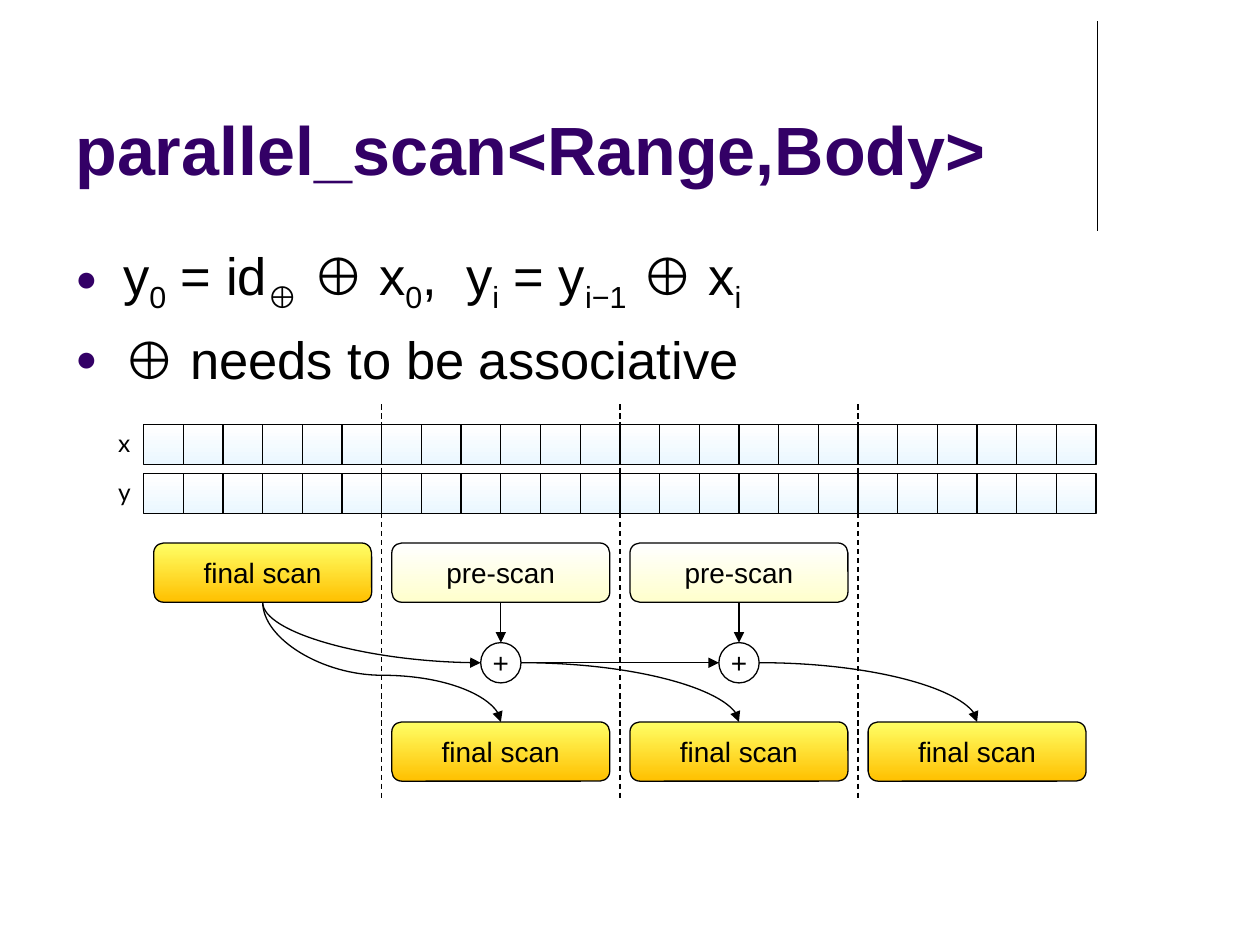
from lxml.etree import SubElement
from pptx import Presentation
from pptx.dml.color import RGBColor
from pptx.enum.dml import MSO_LINE
from pptx.enum.shapes import MSO_CONNECTOR, MSO_SHAPE
from pptx.enum.text import MSO_ANCHOR, PP_ALIGN
from pptx.oxml.ns import qn
from pptx.util import Inches, Pt

COLORS = {
    "title": "330066",
    "ink": "000000",
    "white": "FFFFFF",
    "cell": "EBF7FF",
    "pre": "FFFFCC",
    "final_top": "FFFF66",
    "final_bottom": "FFC000",
}
CELL_FILL = ("white", "cell")
PRE_FILL = ("white", "pre")
FINAL_FILL = ("final_top", "final_bottom")

# Grid of four blocks with six cells each
GRID_LEFT, BLOCK_W, BLOCKS, CELLS_PER_BLOCK = 1.14, 1.89, 4, 6
CELL_W = BLOCK_W / CELLS_PER_BLOCK
ROWS = {"y": 3.76, "x": 3.37}

# Scan boxes and sum circles
SCAN_GAP, SCAN_H = 0.08, 0.47
SCAN_W = BLOCK_W - 2 * SCAN_GAP
FIRST_TOP, SECOND_TOP = 4.31, 5.73
FIRST_BOTTOM = FIRST_TOP + SCAN_H
SUM_SIZE, SUM_TOP = 0.32, 5.1
SUM_MIDDLE = SUM_TOP + SUM_SIZE / 2

# Each formula piece is (text, is_subscript)
RECURRENCE = [("y", False), ("0", True), (" = id", False), ("⊕", True),
              (" ⊕ x", False), ("0", True), (",  y", False), ("i", True),
              (" = y", False), ("i−1", True), (" ⊕ x", False), ("i", True)]
REQUIREMENT = [("⊕ needs to be associative", False)]


def rgb(name):
    return RGBColor.from_string(COLORS[name])


def block_left(block):
    return GRID_LEFT + block * BLOCK_W


def block_center(block):
    return block_left(block) + BLOCK_W / 2


def style_font(paragraph, size, color="ink", name="Arial", bold=False):
    font = paragraph.font
    font.name, font.size, font.bold = name, Pt(size), bold
    font.color.rgb = rgb(color)


def add_text_box(slide, left, top, width, height, wrap=True):
    frame = slide.shapes.add_textbox(
        Inches(left), Inches(top), Inches(width), Inches(height)).text_frame
    frame.word_wrap = wrap
    return frame


def add_bullet(paragraph, pieces):
    p_pr = paragraph._p.get_or_add_pPr()
    p_pr.set("marL", str(Inches(0.38)))
    p_pr.set("indent", str(-Inches(0.38)))
    bullet_color = SubElement(p_pr, qn("a:buClr"))
    SubElement(bullet_color, qn("a:srgbClr"), val=COLORS["title"])
    SubElement(p_pr, qn("a:buSzPct"), val="70000")
    SubElement(p_pr, qn("a:buFont"), typeface="Arial")
    SubElement(p_pr, qn("a:buChar"), char="●")
    style_font(paragraph, 30)
    for text, is_subscript in pieces:
        run = paragraph.add_run()
        run.text = text
        if is_subscript:
            run._r.get_or_add_rPr().set("baseline", "-25000")


def add_node(slide, preset, left, top, width, height, fill, label=""):
    """Add an outlined shape; fill is one color name or a top and bottom pair."""
    node = slide.shapes.add_shape(
        preset, Inches(left), Inches(top), Inches(width), Inches(height))
    node.shadow.inherit = False
    node.line.color.rgb = rgb("ink")
    node.line.width = Pt(0.75)
    if isinstance(fill, tuple):
        node.fill.gradient()
        node.fill.gradient_angle = 270
        for stop, color in zip(node.fill.gradient_stops, fill):
            stop.color.rgb = rgb(color)
    else:
        node.fill.solid()
        node.fill.fore_color.rgb = rgb(fill)
    if label:
        frame = node.text_frame
        frame.word_wrap = False
        frame.vertical_anchor = MSO_ANCHOR.MIDDLE
        paragraph = frame.paragraphs[0]
        paragraph.text = label
        paragraph.alignment = PP_ALIGN.CENTER
        style_font(paragraph, 16)
    return node


def add_scan(slide, block, top, fill, label):
    return add_node(slide, MSO_SHAPE.ROUNDED_RECTANGLE,
                    block_left(block) + SCAN_GAP, top, SCAN_W, SCAN_H, fill, label)


def add_line(slide, start, end, kind=MSO_CONNECTOR.STRAIGHT, dashed=False, arrow=False):
    line = slide.shapes.add_connector(kind, *map(Inches, start + end))
    line.line.color.rgb = rgb("ink")
    line.line.width = Pt(0.75)
    if dashed:
        line.line.dash_style = MSO_LINE.DASH
    if arrow:
        SubElement(line.line._get_or_add_ln(), qn("a:tailEnd"), type="triangle")
    SubElement(line._element.spPr, qn("a:effectLst"))
    return line


def add_curve(slide, start, end, leaves_down=False, bend=None):
    """Add a curved arrow: a quarter turn, or an S whose middle lies at bend."""
    curve = add_line(slide, start, end, MSO_CONNECTOR.CURVE, arrow=True)
    geometry = curve._element.spPr.find(qn("a:prstGeom"))
    if bend is None:
        geometry.set("prst", "curvedConnector2")
    else:
        SubElement(geometry.find(qn("a:avLst")), qn("a:gd"),
                   name="adj1", fmla=f"val {round(bend * 100000)}")
    if leaves_down:
        # Turn the frame about its center so that the curve starts downwards
        width, height = curve.width, curve.height
        curve.left += (width - height) // 2
        curve.top += (height - width) // 2
        curve.width, curve.height = height, width
        frame = curve._element.spPr.find(qn("a:xfrm"))
        frame.set("rot", str(270 * 60000))
        frame.set("flipH", "1")


def add_heading(slide):
    add_line(slide, (8.71, 0.17), (8.71, 1.83))
    title = add_text_box(slide, 0.5, 0.13, 8.25, 1.42)
    title.vertical_anchor = MSO_ANCHOR.BOTTOM
    title.paragraphs[0].text = "parallel_scan<Range,Body>"
    style_font(title.paragraphs[0], 39, "title", bold=True)

    definition = add_text_box(slide, 0.5, 1.88, 9, 4.82)
    add_bullet(definition.paragraphs[0], RECURRENCE)
    requirement = definition.add_paragraph()
    add_bullet(requirement, REQUIREMENT)
    requirement.space_before = Pt(7)


def add_arrays(slide):
    for name, top in ROWS.items():
        for cell in range(BLOCKS * CELLS_PER_BLOCK):
            add_node(slide, MSO_SHAPE.RECTANGLE, GRID_LEFT + cell * CELL_W, top,
                     CELL_W, CELL_W, CELL_FILL)
        label = add_text_box(slide, 0.84, top - 0.02, 0.3, 0.33, wrap=False)
        label.paragraphs[0].text = name
        style_font(label.paragraphs[0], 14, name="Lato")
    for block in range(1, BLOCKS):
        add_line(slide, (block_left(block), 3.21), (block_left(block), 6.36), dashed=True)


def add_scans(slide):
    # First pass, with the sums of the pre-scans
    add_scan(slide, 0, FIRST_TOP, FINAL_FILL, "final scan")
    for block in (1, 2):
        center = block_center(block)
        pre_scan = add_scan(slide, block, FIRST_TOP, PRE_FILL, "pre-scan")
        total = add_node(slide, MSO_SHAPE.OVAL, center - SUM_SIZE / 2, SUM_TOP,
                         SUM_SIZE, SUM_SIZE, "white", "+")
        down = add_line(slide, (center, FIRST_BOTTOM), (center, SUM_TOP), arrow=True)
        down.begin_connect(pre_scan, 2)
        down.end_connect(total, 0)

    # Second pass
    for block in range(1, BLOCKS):
        add_scan(slide, block, SECOND_TOP, FINAL_FILL, "final scan")

    # Flow of the partial sums
    origin = (block_center(0), FIRST_BOTTOM)
    sum_left = [(block_center(b) - SUM_SIZE / 2, SUM_MIDDLE) for b in (1, 2)]
    sum_right = [(block_center(b) + SUM_SIZE / 2, SUM_MIDDLE) for b in (1, 2)]
    add_curve(slide, origin, sum_left[0], leaves_down=True)
    add_curve(slide, origin, (block_center(1), SECOND_TOP), leaves_down=True, bend=0.61)
    add_line(slide, sum_right[0], sum_left[1], arrow=True)
    for block, start in enumerate(sum_right, 2):
        add_curve(slide, start, (block_center(block), SECOND_TOP))


def main():
    deck = Presentation()
    deck.slide_width, deck.slide_height = Inches(10), Inches(7.5)
    slide = deck.slides.add_slide(deck.slide_layouts[6])
    add_heading(slide)
    add_arrays(slide)
    add_scans(slide)
    deck.save("out.pptx")


if __name__ == "__main__":
    main()
